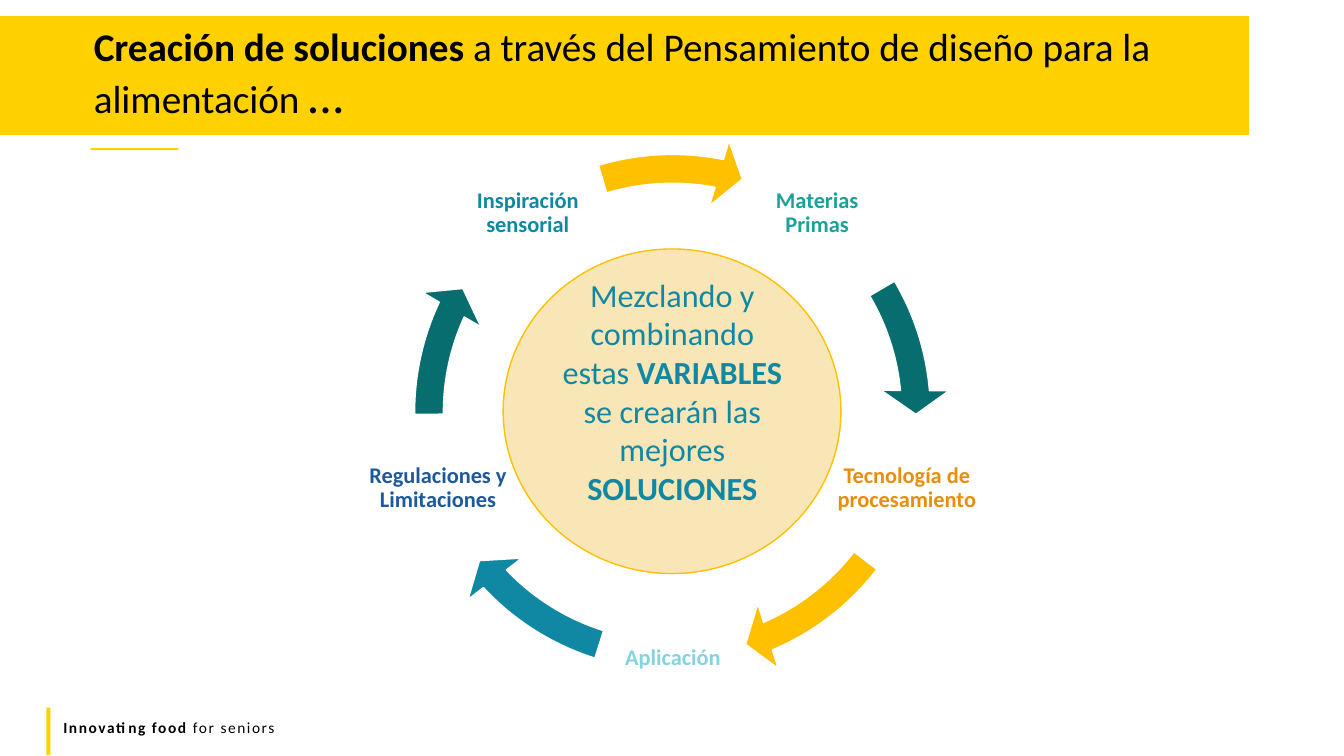
"""Build the slide on design thinking for food as a five-step cycle."""
from dataclasses import dataclass
from math import cos, radians, sin

from pptx import Presentation
from pptx.dml.color import RGBColor
from pptx.enum.shapes import MSO_SHAPE as Shape
from pptx.enum.text import MSO_ANCHOR as Anchor, MSO_AUTO_SIZE as Fit, PP_ALIGN as Align
from pptx.util import Emu, Pt

PX = 9144


@dataclass(frozen=True)
class Theme:
    font: str = "Calibri"
    yellow: str = "FFD100"
    amber: str = "FFC000"
    cream: str = "F9E6B6"
    green: str = "086D6E"
    teal: str = "1188A3"
    mint: str = "1BA19A"
    orange: str = "E78E0B"
    sky: str = "85D2E1"
    navy: str = "1D599B"
    black: str = "000000"
    white: str = "FFFFFF"
    title: int = 28
    ellipsis: int = 36
    centre: int = 23
    label: int = 16
    footer: int = 11


@dataclass(frozen=True)
class Box:
    x: int
    y: int
    w: int
    h: int

    def emu(self) -> tuple:
        return tuple(Emu(v * PX) for v in (self.x, self.y, self.w, self.h))


@dataclass(frozen=True)
class Run:
    text: str
    size: int
    color: str
    bold: bool = False
    spacing: int = 0


@dataclass(frozen=True)
class Step:
    label: str
    label_color: str
    arrow_color: str
    arrow_end: float
    arrow_start: float


T = Theme()
RING = Box(392, 134, 550, 550)
LABEL_RADIUS = 244
LABEL_SIDE = 147
STEPS = [
    Step("Materias Primas", T.mint, T.green, 212.93, 197.67),
    Step("Tecnología de procesamiento", T.orange, T.amber, 40.14, 22.54),
    Step("Aplicación", T.sky, T.teal, 82.1, 64.5),
    Step("Regulaciones y Limitaciones", T.navy, T.green, 122.97, 107.71),
    Step("Inspiración sensorial", T.teal, T.amber, 168.65, 151.99),
]


def add_runs(p, runs: list[Run]) -> None:
    """Append formatted runs to a paragraph."""
    for run in runs:
        r = p.add_run()
        r.text = run.text
        r.font.name = T.font
        r.font.size = Pt(run.size)
        r.font.bold = run.bold
        r.font.color.rgb = RGBColor.from_string(run.color)
        if run.spacing:
            r._r.get_or_add_rPr().set("spc", str(run.spacing))


def add_filled(s, kind: Shape, box: Box, fill: str, line: str = ""):
    """Draw a preset shape with a flat fill and an optional outline."""
    sp = s.shapes.add_shape(kind, *box.emu())
    sp.shadow.inherit = False
    sp.fill.solid()
    sp.fill.fore_color.rgb = RGBColor.from_string(fill)
    if line:
        sp.line.color.rgb = RGBColor.from_string(line)
        sp.line.width = Pt(1)
    else:
        sp.line.fill.background()
    return sp


def add_text(s, box: Box, runs: list[Run], align: Align = Align.LEFT):
    """Place a wrapping text box and return its frame."""
    tf = s.shapes.add_textbox(*box.emu()).text_frame
    tf.word_wrap = True
    tf.auto_size = Fit.SHAPE_TO_FIT_TEXT
    p = tf.paragraphs[0]
    p.alignment = align
    add_runs(p, runs)
    return tf


def add_title(s) -> None:
    """Format the title placeholder as the yellow band."""
    sp = s.shapes.title
    sp.left, sp.top, sp.width, sp.height = Box(0, 16, 1239, 118).emu()
    sp.fill.solid()
    sp.fill.fore_color.rgb = RGBColor.from_string(T.yellow)
    tf = sp.text_frame
    tf.word_wrap = True
    tf.auto_size = Fit.NONE
    tf.vertical_anchor = Anchor.MIDDLE
    p = tf.paragraphs[0]
    p.alignment = Align.LEFT
    p.line_spacing = 0.9
    pPr = p._p.get_or_add_pPr()
    pPr.set("marL", str(83 * PX))
    pPr.set("indent", "0")
    add_runs(p, [
        Run("Creación de soluciones ", T.title, T.black, True),
        Run("a través del Pensamiento de diseño para la alimentación ", T.title, T.black),
        Run("…", T.ellipsis, T.black),
    ])


def add_step(s, index: int, step: Step) -> None:
    """Draw one label on the ring and the arrow that follows it."""
    angle = radians(-54 + index * 360 / len(STEPS))
    x = RING.x + RING.w / 2 + LABEL_RADIUS * cos(angle) - LABEL_SIDE / 2
    y = RING.y + RING.h / 2 + LABEL_RADIUS * sin(angle) - LABEL_SIDE / 2
    tf = add_text(s, Box(round(x), round(y), LABEL_SIDE, LABEL_SIDE),
                  [Run(step.label, T.label, step.label_color, True)], Align.CENTER)
    tf.auto_size = Fit.NONE
    tf.vertical_anchor = Anchor.MIDDLE
    tf.margin_left = tf.margin_right = tf.margin_top = tf.margin_bottom = Emu(2 * PX)
    tf.paragraphs[0].line_spacing = 0.9
    arrow = add_filled(s, Shape.CIRCULAR_ARROW, RING, step.arrow_color, T.white)
    for i, value in enumerate((0.052, 3.36, step.arrow_end, step.arrow_start, 0.061)):
        arrow.adjustments[i] = value


def main() -> None:
    """Assemble and save the slide."""
    prs = Presentation()
    prs.slide_width, prs.slide_height = Emu(1333 * PX), Emu(750 * PX)
    s = prs.slides.add_slide(prs.slide_layouts[5])
    add_title(s)
    add_filled(s, Shape.RECTANGLE, Box(90, 147, 87, 2), T.yellow)
    add_filled(s, Shape.RECTANGLE, Box(46, 702, 4, 47), T.yellow)
    add_text(s, Box(53, 707, 1200, 29), [
        Run("Innovating food ", T.footer, T.black, True, 110),
        Run("for seniors", T.footer, T.black, False, 110),
    ])
    for index, step in enumerate(STEPS):
        add_step(s, index, step)
    add_filled(s, Shape.OVAL, Box(499, 247, 335, 322), T.cream, T.amber)
    add_text(s, Box(547, 268, 240, 281), [
        Run("Mezclando y combinando estas ", T.centre, T.teal),
        Run("VARIABLES", T.centre, T.teal, True),
        Run(" se crearán las mejores ", T.centre, T.teal),
        Run("SOLUCIONES", T.centre, T.teal, True),
    ], Align.CENTER)
    prs.save("out.pptx")


if __name__ == "__main__":
    main()
